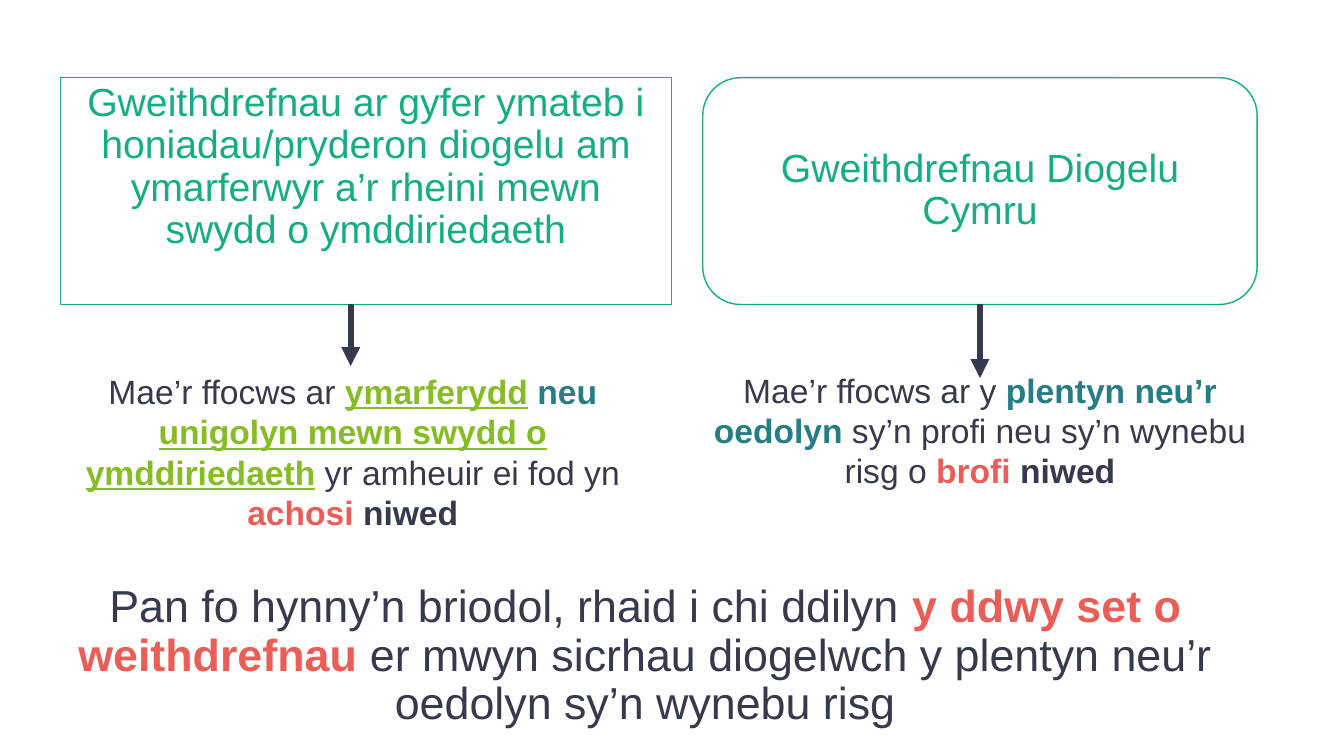
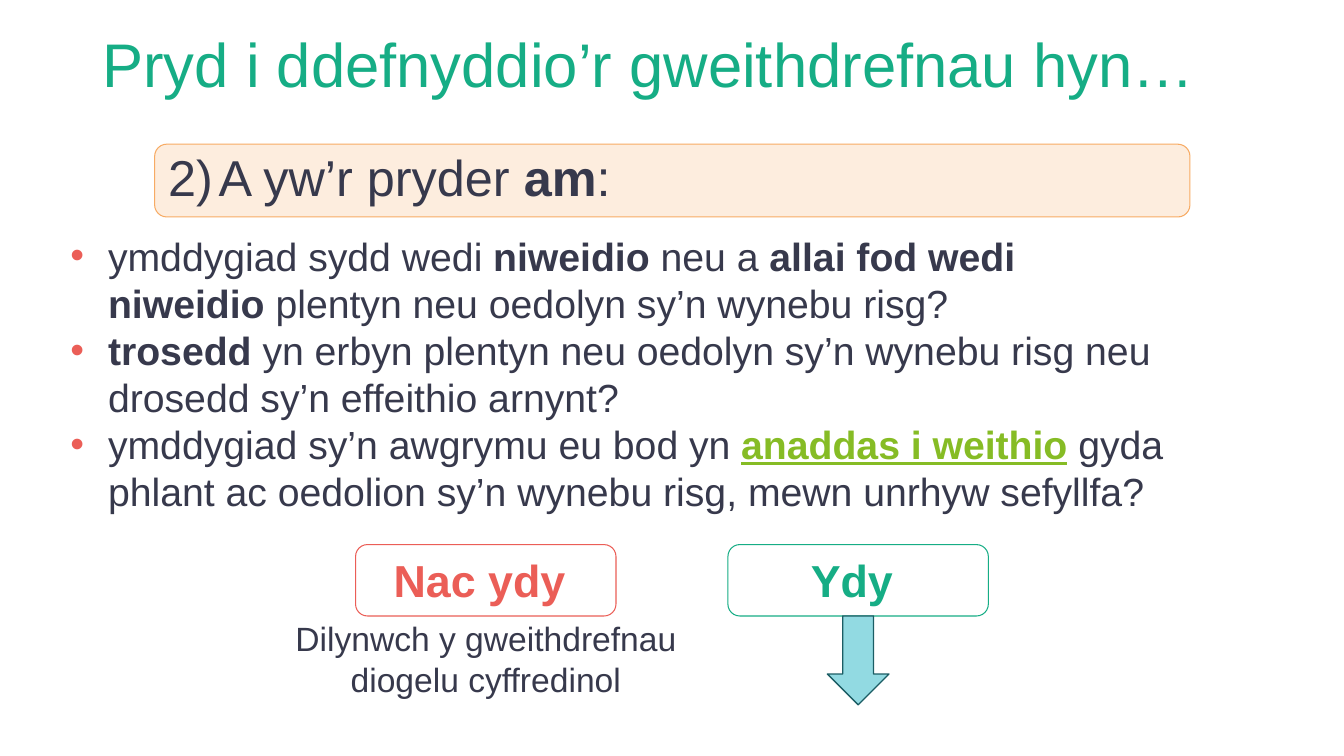
"""Build two slides on the Welsh safeguarding procedures."""
from lxml.etree import SubElement as Sub
from pptx import Presentation
from pptx.dml.color import RGBColor
from pptx.enum.shapes import MSO_CONNECTOR as Conn, MSO_SHAPE as Kind
from pptx.enum.text import MSO_ANCHOR as Anchor, MSO_AUTO_SIZE as Auto, PP_ALIGN as Align
from pptx.oxml.ns import qn
from pptx.util import Pt

FONT = "Arial"
INK, MINT, RED, LIME, TEAL = "37394C", "16AD85", "EB5E57", "86BC25", "257D86"
LOOKS = {
    "plain": (INK, False, False),
    "bold": (INK, True, False),
    "head": (MINT, False, False),
    "yes": (MINT, True, False),
    "red": (RED, True, False),
    "teal": (TEAL, True, False),
    "lime": (LIME, True, True),
}

HEADS = [
    "Gweithdrefnau ar gyfer ymateb i honiadau/pryderon diogelu am ymarferwyr a’r rheini mewn swydd o ymddiriedaeth",
    "Gweithdrefnau Diogelu Cymru",
]
FOCUS = [
    [("Mae’r ffocws ar ", "plain"), ("ymarferydd", "lime"), (" neu ", "teal"),
     ("unigolyn mewn swydd o ymddiriedaeth", "lime"),
     (" yr amheuir ei fod yn ", "plain"), ("achosi ", "red"), ("niwed", "bold")],
    [("Mae’r ffocws ar y ", "plain"), ("plentyn neu’r oedolyn ", "teal"),
     ("sy’n profi neu sy’n wynebu risg o ", "plain"), ("brofi ", "red"), ("niwed", "bold")],
]
RULE = [
    ("Pan fo hynny’n briodol, rhaid i chi ddilyn ", "plain"),
    ("y ddwy set o weithdrefnau ", "red"),
    ("er mwyn sicrhau diogelwch y plentyn neu’r oedolyn sy’n wynebu risg", "plain"),
]
WHEN = "Pryd i ddefnyddio’r gweithdrefnau hyn…"
ASK = [("2)\tA yw’r pryder ", "plain"), ("am", "bold"), (":", "plain")]
TESTS = [
    [("ymddygiad sydd wedi ", "plain"), ("niweidio ", "bold"), ("neu a ", "plain"),
     ("allai fod wedi niweidio ", "bold"), ("plentyn neu oedolyn sy’n wynebu risg?", "plain")],
    [("trosedd ", "bold"),
     ("yn erbyn plentyn neu oedolyn sy’n wynebu risg neu drosedd sy’n effeithio arnynt?", "plain")],
    [("ymddygiad sy’n awgrymu eu bod yn ", "plain"), ("anaddas i weithio", "lime"),
     (" gyda phlant ac oedolion sy’n wynebu risg, mewn unrhyw sefyllfa?", "plain")],
]
REPLIES = [("Nac ydy", "red", RED), ("Ydy", "yes", MINT)]
NOTE = "Dilynwch y gweithdrefnau diogelu cyffredinol"


def tint(code):
    return RGBColor.from_string(code)


def place(shape, box):
    shape.left, shape.top, shape.width, shape.height = map(Pt, box)
    return shape


def paint(shape, fill, line, width):
    if fill:
        shape.fill.solid()
        shape.fill.fore_color.rgb = tint(fill)
    else:
        shape.fill.background()
    shape.line.color.rgb = tint(line)
    shape.line.width = Pt(width)


def draw(slide, kind, box, fill, line, width):
    shape = slide.shapes.add_shape(kind, *map(Pt, box))
    shape.shadow.inherit = False
    paint(shape, fill, line, width)
    return shape


def write(shape, paras, size, align=Align.CENTER, anchor=Anchor.TOP, lead=1.0, bullet=False, tab=0):
    frame = shape.text_frame
    frame.word_wrap = True
    frame.auto_size = Auto.NONE
    frame.vertical_anchor = anchor
    for n, runs in enumerate(paras):
        para = frame.add_paragraph() if n else frame.paragraphs[0]
        props = para._p.get_or_add_pPr()
        hang = Pt(27) if bullet else 0
        props.set("marL", str(hang))
        props.set("indent", str(-hang))
        if bullet:
            Sub(Sub(props, qn("a:buClr")), qn("a:srgbClr"), val=RED)
            Sub(props, qn("a:buFont"), typeface=FONT)
            Sub(props, qn("a:buChar"), char="•")
        else:
            Sub(props, qn("a:buNone"))
        if tab:
            Sub(Sub(props, qn("a:tabLst")), qn("a:tab"), pos=str(Pt(tab)), algn="l")
        para.alignment, para.line_spacing = align, lead
        para.space_before = para.space_after = Pt(0)
        for text, look in runs:
            run = para.add_run()
            run.text = text
            font = run.font
            font.name, font.size = FONT, Pt(size)
            code, font.bold, font.underline = LOOKS[look]
            font.color.rgb = tint(code)


def label(slide, box, runs, size):
    write(slide.shapes.add_textbox(*map(Pt, box)), [runs], size)


def arrow(slide, x, top, end):
    line = slide.shapes.add_connector(Conn.STRAIGHT, Pt(x), Pt(top), Pt(x), Pt(end))
    line.line.color.rgb = tint(INK)
    line.line.width = Pt(4.5)
    Sub(line.line._get_or_add_ln(), qn("a:tailEnd"), type="triangle")
    Sub(line._element.spPr, qn("a:effectLst"))
    return line


def start(deck, title, size, box, align, anchor):
    slide = deck.slides.add_slide(deck.slide_layouts[1])
    head = place(slide.shapes.title, box)
    write(head, [[(title, "head")]], size, align, anchor, 0.9)
    return slide


def compare(deck):
    top, high, wide, right = 55.5, 162, 396, 502
    base = top + high
    slide = start(deck, HEADS[0], 28, (43, top, 436.5, high), Align.CENTER, Anchor.TOP)
    paint(slide.shapes.title, "FFFFFF", MINT, 1)
    card = draw(slide, Kind.ROUNDED_RECTANGLE, (right, top, wide, high), "FFFFFF", MINT, 1)
    write(card, [[(HEADS[1], "head")]], 28, anchor=Anchor.MIDDLE, lead=0.9)
    for x, y, runs in zip((54, right), (261.5, 260.5), FOCUS):
        label(slide, (x, y, wide, 143), runs, 24)
    arrow(slide, 250.5, base, 261.5)
    arrow(slide, right + wide / 2, base, 270).begin_connect(card, 2)
    body = place(slide.placeholders[1], (25, 413.5, 872, 122))
    write(body, [RULE], 32, lead=0.9)


def decide(deck):
    slide = start(deck, WHEN, 44, (66, 1.5, 828, 93.5), Align.LEFT, Anchor.MIDDLE)
    ask = draw(slide, Kind.ROUNDED_RECTANGLE, (110.5, 103, 739.5, 52), "FDEDDE", "F7AB64", 0.75)
    write(ask, [ASK], 36, Align.LEFT, Anchor.MIDDLE, 0.9, tab=50)
    body = place(slide.placeholders[1], (43, 162, 806.5, 211))
    write(body, TESTS, 28, Align.LEFT, bullet=True)
    left, top, wide, high, step = 254, 389, 186, 51, 266
    base = top + high
    for n, (text, look, edge) in enumerate(REPLIES):
        box = (left + n * step, top, wide, high)
        reply = draw(slide, Kind.ROUNDED_RECTANGLE, box, None, edge, 0.75)
        write(reply, [[(text, look)]], 32)
        reply.text_frame.margin_right = Pt(16)
    label(slide, (201, base - 2, 292, 65.5), [(NOTE, "plain")], 24)
    draw(slide, Kind.DOWN_ARROW, (left + step + 71, base, 44, 63.5), "92DAE2", "1B5D64", 1)


def main():
    deck = Presentation()
    deck.slide_width, deck.slide_height = Pt(960), Pt(540)
    compare(deck)
    decide(deck)
    deck.save("out.pptx")


if __name__ == "__main__":
    main()
